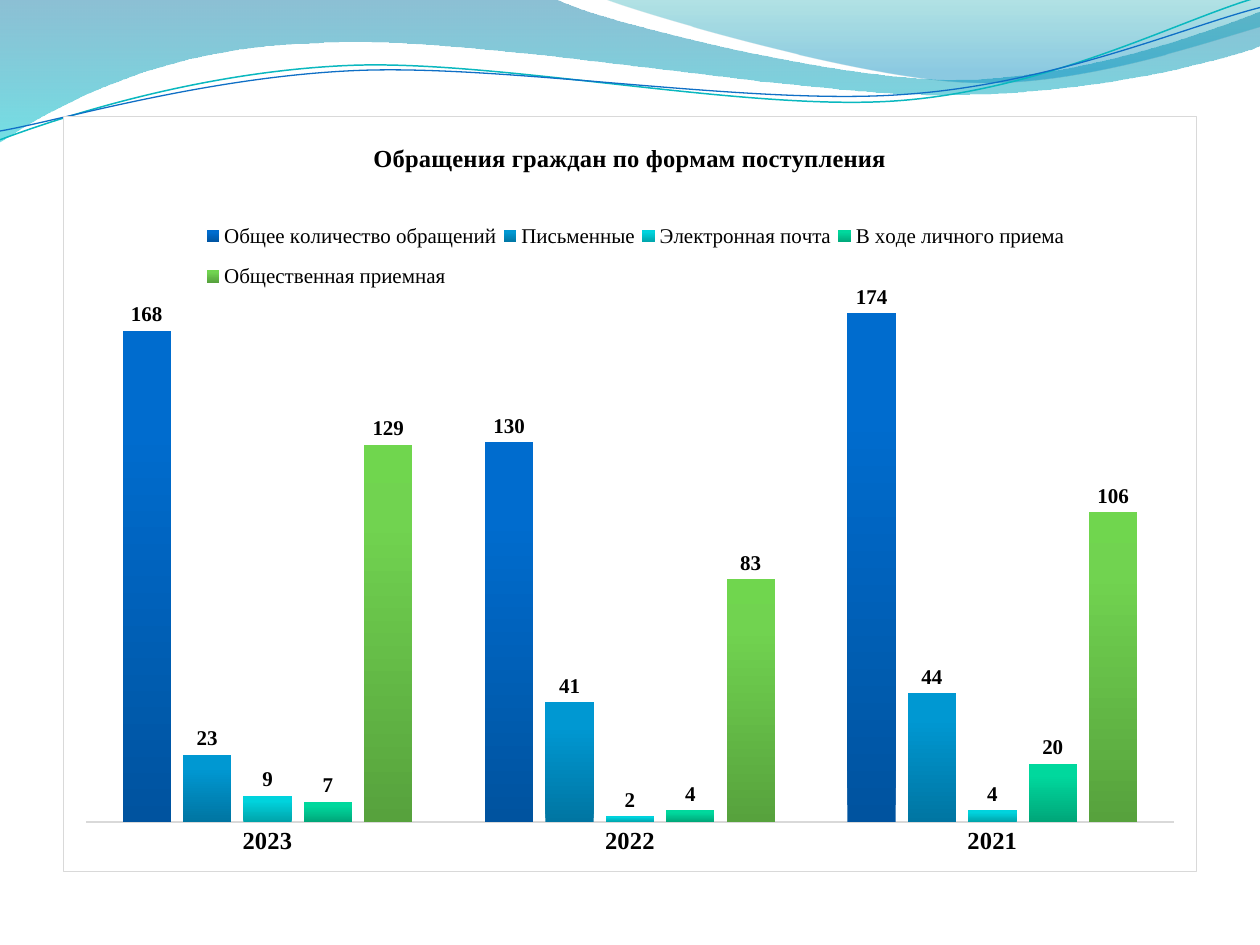
import pptx
import pptx.chart.data
import pptx.dml.color
import pptx.enum.chart
import pptx.oxml
import pptx.oxml.ns
import pptx.util

PX = 9144  # EMU per px, 100 px to the inch
FONT = "Times New Roman"
COLORS = {
    "text": "000000",
    "paper": "FFFFFF",
    "rule": "D9D9D9",
    "teal_line": "0AB8BF",
    "blue_line": "0F6FC6",
}

# Gradient stops: (position %, colour, opacity %)
WAVE_STOPS = [(0, "0074A1", 45), (100, "00C6CF", 55)]
CREST_STOPS = [(0, "00A1A9", 30), (80, "008BBF", 45)]

# Outlines: start point, then lines (2 numbers) and Bezier curves (6 numbers)
WAVE = [(0, 0), (440, -1), (476, 17, 664, 63, 758, 63), (853, 63, 958, 26, 1000, 9),
        (1001, 36), (983, 44, 870, 76, 746, 75), (622, 75, 382, 28, 257, 34),
        (129, 36, 46, 83, -1, 113), (0, 0)]
CREST = [(479, -1), (509, 11, 682, 62, 769, 65), (856, 69, 961, 32, 1000, 21),
         (1000, 0), (479, -1)]
TEAL_CURVE = [(0, 111), (48, 93, 158, 57, 277, 52), (395, 47, 593, 89, 713, 80),
              (833, 71, 938, 15, 998, -2)]
BLUE_CURVE = [(0, 104), (47, 96, 164, 61, 283, 56), (403, 51, 597, 84, 717, 75),
              (836, 67, 941, 21, 1000, 6)]

TITLE = "Обращения граждан по формам поступления"
YEARS = ["2023", "2022", "2021"]
SERIES = [
    ("Общее количество обращений", (168, 130, 174), ("00539F", "006CCE", "006DCF")),
    ("Письменные", (23, 41, 44), ("0075A2", "0098D2", "0099D3")),
    ("Электронная почта", (9, 2, 4), ("00A3AA", "00D3DD", "00D4DE")),
    ("В ходе личного приема", (7, 4, 20), ("00A679", "00D89D", "00D99E")),
    ("Общественная приемная", (129, 83, 106), ("57A23D", "71D350", "70D64E")),
]


def xml(text):
    """Parse markup whose root tag may use the a: and c: prefixes."""
    head, mark, rest = text.partition(">")
    declarations = pptx.oxml.ns.nsdecls("a", "c")
    return pptx.oxml.parse_xml(f"{head} {declarations}{mark}{rest}")


def rgb(name):
    return pptx.dml.color.RGBColor.from_string(COLORS[name])


def gradient(stops, angle):
    marks = "".join(
        f'<a:gs pos="{position * 1000}"><a:srgbClr val="{color}">'
        f'<a:alpha val="{opacity * 1000}"/></a:srgbClr></a:gs>'
        for position, color, opacity in stops)
    return xml(f'<a:gradFill rotWithShape="1"><a:gsLst>{marks}</a:gsLst>'
               f'<a:lin ang="{angle * 60000}" scaled="0"/></a:gradFill>')


def set_gradient(fill, properties, stops, angle):
    """Put a gradient where a solid fill would stand."""
    fill.solid()
    solid = properties.find(pptx.oxml.ns.qn("a:solidFill"))
    properties.replace(solid, gradient(stops, angle))


def manual_layout(x, y, width, height, inner=False):
    target = '<c:layoutTarget val="inner"/>' if inner else ""
    return xml(f'<c:layout><c:manualLayout>{target}'
               '<c:xMode val="edge"/><c:yMode val="edge"/>'
               f'<c:x val="{x}"/><c:y val="{y}"/><c:w val="{width}"/>'
               f'<c:h val="{height}"/></c:manualLayout></c:layout>')


class SlideBuilder:
    """Holds the style and the slide being filled."""

    def __init__(self, slide):
        self.slide = slide

    def style_font(self, font, size, bold=False):
        font.name = FONT
        font.size = pptx.util.Pt(size)
        font.bold = bold
        font.color.rgb = rgb("text")

    def outline(self, segments, closed=False):
        """Draw a freeform, folding each three points of a curve into a Bezier."""
        start, *rest = segments
        points = [segment[i:i + 2] for segment in rest for i in range(0, len(segment), 2)]
        builder = self.slide.shapes.build_freeform(*start, scale=PX)
        builder.add_line_segments(points, close=closed)
        shape = builder.convert_to_shape()
        shape.shadow.inherit = False
        steps = iter(list(shape._element.iter(pptx.oxml.ns.qn("a:lnTo"))))
        for segment in rest:
            step = next(steps)
            if len(segment) == 6:
                curve = xml("<a:cubicBezTo></a:cubicBezTo>")
                step.addprevious(curve)
                for item in (step, next(steps), next(steps)):
                    curve.append(item[0])
                    item.getparent().remove(item)
        return shape

    def wave(self, segments, stops):
        shape = self.outline(segments, closed=True)
        set_gradient(shape.fill, shape._element.spPr, stops, 90)
        shape.line.fill.background()

    def curve(self, segments, color, width):
        shape = self.outline(segments)
        shape.fill.background()
        shape.line.color.rgb = rgb(color)
        shape.line.width = pptx.util.Pt(width)

    def column_chart(self, left, top, width, height):
        data = pptx.chart.data.CategoryChartData()
        data.categories = YEARS
        for name, values, _ in SERIES:
            data.add_series(name, values)
        chart = self.slide.shapes.add_chart(
            pptx.enum.chart.XL_CHART_TYPE.COLUMN_CLUSTERED,
            left * PX, top * PX, width * PX, height * PX, data).chart
        chart.font.name = "Cambria"
        chart.font.size = pptx.util.Pt(10)
        chart.font.color.rgb = rgb("text")
        self.chart_frame(chart)
        self.chart_axes(chart)
        self.chart_columns(chart.plots[0])

        chart.has_title = True
        title = chart.chart_title.text_frame
        title.text = TITLE
        self.style_font(title.paragraphs[0].runs[0].font, 14, bold=True)

        chart.has_legend = True
        legend = chart.legend
        legend.position = pptx.enum.chart.XL_LEGEND_POSITION.TOP
        legend.include_in_layout = False
        self.style_font(legend.font, 12)
        position = legend._element.find(pptx.oxml.ns.qn("c:legendPos"))
        position.addnext(manual_layout(0.12, 0.12, 0.77, 0.13))

    def chart_frame(self, chart):
        body = chart._chartSpace.find(pptx.oxml.ns.qn("c:chart"))
        body.addnext(xml(
            f'<c:spPr><a:solidFill><a:srgbClr val="{COLORS["paper"]}"/></a:solidFill>'
            f'<a:ln w="9525"><a:solidFill><a:srgbClr val="{COLORS["rule"]}"/>'
            '</a:solidFill></a:ln></c:spPr>'))
        plot_area = body.find(pptx.oxml.ns.qn("c:plotArea"))
        for layout in plot_area.findall(pptx.oxml.ns.qn("c:layout")):
            plot_area.remove(layout)
        plot_area.insert(0, manual_layout(0.02, 0.16, 0.96, 0.775, inner=True))

    def chart_axes(self, chart):
        values = chart.value_axis
        values.minimum_scale, values.maximum_scale = 0, 200
        values.has_major_gridlines = False
        values.visible = False
        years = chart.category_axis
        years.major_tick_mark = pptx.enum.chart.XL_TICK_MARK.NONE
        years.format.line.color.rgb = rgb("rule")
        years.format.line.width = pptx.util.Pt(1)
        self.style_font(years.tick_labels.font, 14, bold=True)

    def chart_columns(self, plot):
        plot.gap_width = 150
        plot.overlap = -25
        plot.vary_by_categories = False
        for series, (_, _, colors) in zip(plot.series, SERIES):
            stops = [(position, color, 100) for position, color in zip((0, 80, 100), colors)]
            fill = series.format.fill
            set_gradient(fill, series._element.spPr, stops, 270)
            labels = series.data_labels
            labels.show_value = True
            labels.position = pptx.enum.chart.XL_LABEL_POSITION.OUTSIDE_END
            self.style_font(labels.font, 12, bold=True)


def main():
    presentation = pptx.Presentation()
    presentation.slide_width = 1000 * PX
    presentation.slide_height = 750 * PX
    builder = SlideBuilder(presentation.slides.add_slide(presentation.slide_layouts[6]))
    builder.wave(WAVE, WAVE_STOPS)
    builder.wave(CREST, CREST_STOPS)
    builder.curve(TEAL_CURVE, "teal_line", 0.85)
    builder.curve(BLUE_CURVE, "blue_line", 0.75)
    builder.column_chart(50, 92, 900, 600)
    presentation.save("out.pptx")


if __name__ == "__main__":
    main()
